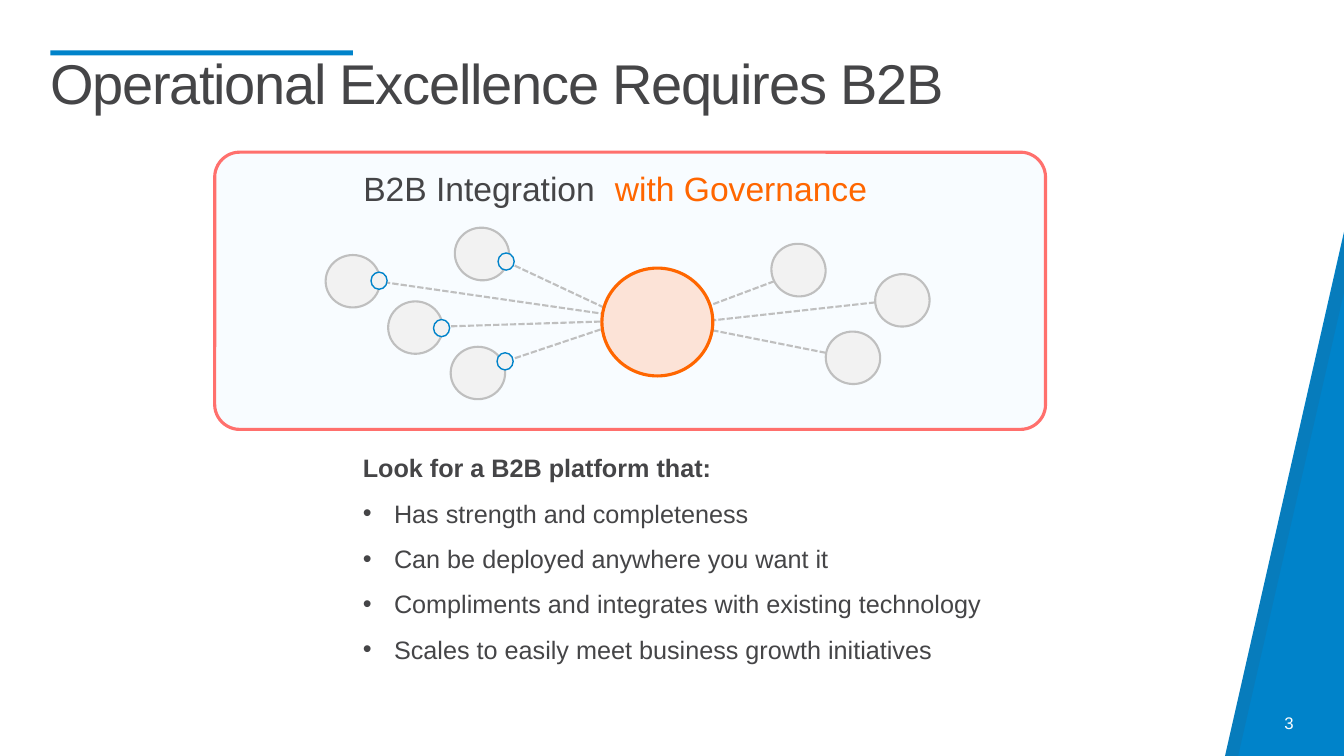
"""Build the slide on B2B integration with governance."""
from typing import NamedTuple

from lxml import etree
from pptx import Presentation
from pptx.dml.color import RGBColor
from pptx.enum.dml import MSO_LINE
from pptx.enum.shapes import MSO_CONNECTOR, MSO_SHAPE
from pptx.enum.text import MSO_ANCHOR, MSO_AUTO_SIZE, PP_ALIGN
from pptx.oxml.ns import qn
from pptx.util import Inches, Pt

RECTANGLE = MSO_SHAPE.RECTANGLE
ROUNDED = MSO_SHAPE.ROUNDED_RECTANGLE
OVAL = MSO_SHAPE.OVAL
STRAIGHT = MSO_CONNECTOR.STRAIGHT
DASHED = MSO_LINE.SQUARE_DOT
LEFT, RIGHT = PP_ALIGN.LEFT, PP_ALIGN.RIGHT
TOP, BOTTOM = MSO_ANCHOR.TOP, MSO_ANCHOR.BOTTOM
NO_FIT, GROW = MSO_AUTO_SIZE.NONE, MSO_AUTO_SIZE.SHAPE_TO_FIT_TEXT

FONT = "Arial"
INK, BLUE, ORANGE, CORAL = "454547", "0083CA", "FF6600", "FF706D"
WHITE, PALE_GREY, GREY = "FFFFFF", "F2F2F2", "BFBFBF"
PALE_BLUE, PALE_ORANGE = "C1E9FF", "FCE3D7"


class Box(NamedTuple):
    left: float
    top: float
    width: float
    height: float


class Partner(NamedTuple):
    left: float
    top: float
    rotation: float = 0


class Link(NamedTuple):
    x1: float
    y1: float
    x2: float
    y2: float


class Port(NamedTuple):
    left: float
    top: float


class Heading(NamedTuple):
    box: Box
    text: str
    color: str
    align: PP_ALIGN


PARTNERS = [
    Partner(7.65, 2.42, 19.2), Partner(8.68, 2.72, 353.4), Partner(8.19, 3.29, 9.5),
    Partner(4.51, 2.26, 19.2), Partner(3.85, 2.99), Partner(4.47, 3.44), Partner(3.23, 2.53),
]
LINKS = [
    Link(7.68, 2.79, 6.88, 3.09), Link(8.68, 3, 6.87, 3.2), Link(8.19, 3.5, 6.78, 3.22),
    Link(4.39, 3.24, 5.97, 3.19), Link(5.03, 2.6, 6.18, 3.14),
    Link(4.79, 3.66, 6.28, 3.16), Link(6.1, 3.13, 3.6, 2.77),
]
PORTS = [Port(4.94, 2.51), Port(4.3, 3.17), Port(4.93, 3.5), Port(3.68, 2.7)]
HEADINGS = [
    Heading(Box(2.84, 1.62, 3.16, 0.5), "B2B Integration", INK, RIGHT),
    Heading(Box(6, 1.62, 3.3, 0.5), "with Governance", ORANGE, LEFT),
]
PLATFORM_NEEDS = [
    "Has strength and completeness",
    "Can be deployed anywhere you want it",
    "Compliments and integrates with existing technology",
    "Scales to easily meet business growth initiatives",
]


def rgb(color: str) -> RGBColor:
    return RGBColor.from_string(color)


def paint(shape, fill: str, line: str = "", width: float = 0, opacity: int = 100) -> None:
    shape.shadow.inherit = False
    shape.fill.solid()
    shape.fill.fore_color.rgb = rgb(fill)
    if opacity < 100:
        color = shape._element.spPr.find(qn("a:solidFill")).find(qn("a:srgbClr"))
        etree.SubElement(color, qn("a:alpha")).set("val", str(opacity * 1000))
    if line:
        shape.line.color.rgb = rgb(line)
        shape.line.width = Pt(width)
    else:
        shape.line.fill.background()


def add_preset(slide, kind: MSO_SHAPE, box: Box, fill: str, line: str = "",
               width: float = 0, opacity: int = 100):
    shape = slide.shapes.add_shape(kind, *map(Inches, box))
    paint(shape, fill, line, width, opacity)
    return shape


def add_outline(slide, points: list[tuple[float, float]], fill: str, opacity: int = 100) -> None:
    start, *others = [(Inches(x), Inches(y)) for x, y in points]
    builder = slide.shapes.build_freeform(*start)
    builder.add_line_segments(others, close=True)
    paint(builder.convert_to_shape(), fill, opacity=opacity)


def add_link(slide, link: Link) -> None:
    connector = slide.shapes.add_connector(STRAIGHT, *map(Inches, link))
    connector.line.color.rgb = rgb(GREY)
    connector.line.width = Pt(1.5)
    connector.line.dash_style = DASHED
    etree.SubElement(connector._element.spPr, qn("a:effectLst"))


def add_run(paragraph, text: str, size: float, color: str, bold: bool = False):
    run = paragraph.add_run()
    run.text = text
    run.font.name = FONT
    run.font.size = Pt(size)
    run.font.bold = bold
    run.font.color.rgb = rgb(color)
    return run


def add_text_frame(slide, box: Box):
    frame = slide.shapes.add_textbox(*map(Inches, box)).text_frame
    frame.word_wrap = True
    frame.auto_size = GROW
    return frame


def clear_margins(frame) -> None:
    frame.margin_left = frame.margin_top = frame.margin_right = frame.margin_bottom = 0
    frame.auto_size = NO_FIT


def make_bullet(paragraph) -> None:
    properties = paragraph._p.get_or_add_pPr()
    properties.set("marL", str(Inches(0.31)))
    properties.set("indent", str(-Inches(0.31)))
    etree.SubElement(properties, qn("a:buFont")).set("typeface", FONT)
    etree.SubElement(properties, qn("a:buChar")).set("char", "•")


def write_title(slide) -> None:
    title = slide.shapes.title
    title.left, title.top, title.width, title.height = map(Inches, Box(0.5, 0.56, 12.33, 1.3))
    frame = title.text_frame
    clear_margins(frame)
    frame.vertical_anchor = TOP
    paragraph = frame.paragraphs[0]
    paragraph.alignment = LEFT
    paragraph.line_spacing = 0.9
    run = add_run(paragraph, "Operational Excellence Requires B2B", 40, INK)
    run._r.get_or_add_rPr().set("spc", "-90")


def write_page_number(slide) -> None:
    frame = add_text_frame(slide, Box(11.81, 6.77, 1.02, 0.5))
    clear_margins(frame)
    frame.vertical_anchor = BOTTOM
    paragraph = frame.paragraphs[0]
    paragraph.alignment = RIGHT
    add_run(paragraph, "3", 12, WHITE)


def write_platform_needs(slide) -> None:
    frame = add_text_frame(slide, Box(3.5, 4.29, 7.56, 2.35))
    lead = frame.paragraphs[0]
    lead.line_spacing = 1.5
    add_run(lead, "Look for a B2B platform that:", 18, INK, bold=True)
    for need in PLATFORM_NEEDS:
        paragraph = frame.add_paragraph()
        make_bullet(paragraph)
        paragraph.line_spacing = 1.5
        add_run(paragraph, need, 18, INK)


def draw_network(slide) -> None:
    panel = add_preset(slide, ROUNDED, Box(2.13, 1.51, 8.24, 2.75), PALE_BLUE, CORAL, 2.25, 10)
    panel.adjustments[0] = 0.09
    for heading in HEADINGS:
        paragraph = add_text_frame(slide, heading.box).paragraphs[0]
        paragraph.alignment = heading.align
        add_run(paragraph, heading.text, 24, heading.color)
    for link in LINKS:
        add_link(slide, link)
    for partner in PARTNERS:
        box = Box(partner.left, partner.top, 0.54, 0.52)
        add_preset(slide, OVAL, box, PALE_GREY, GREY, 1.5).rotation = partner.rotation
    add_preset(slide, OVAL, Box(5.97, 2.66, 1.1, 1.07), PALE_ORANGE, ORANGE, 2.25)
    for port in PORTS:
        add_preset(slide, OVAL, Box(port.left, port.top, 0.16, 0.17), PALE_GREY, BLUE, 1)


def main() -> None:
    deck = Presentation()
    deck.slide_width, deck.slide_height = Inches(13.33), Inches(7.5)
    slide = deck.slides.add_slide(deck.slide_layouts[5])
    add_preset(slide, RECTANGLE, Box(0.5, 0.5, 3, 0.05), BLUE)
    add_outline(slide, [(13.33, 2.3), (13.33, 7.5), (12.15, 7.5)], BLUE)
    add_outline(slide, [(13.33, 2.34), (13.33, 2.9), (12.28, 7.5), (12.15, 7.5)], INK, 10)
    write_title(slide)
    draw_network(slide)
    write_platform_needs(slide)
    write_page_number(slide)
    deck.save("out.pptx")


if __name__ == "__main__":
    main()
